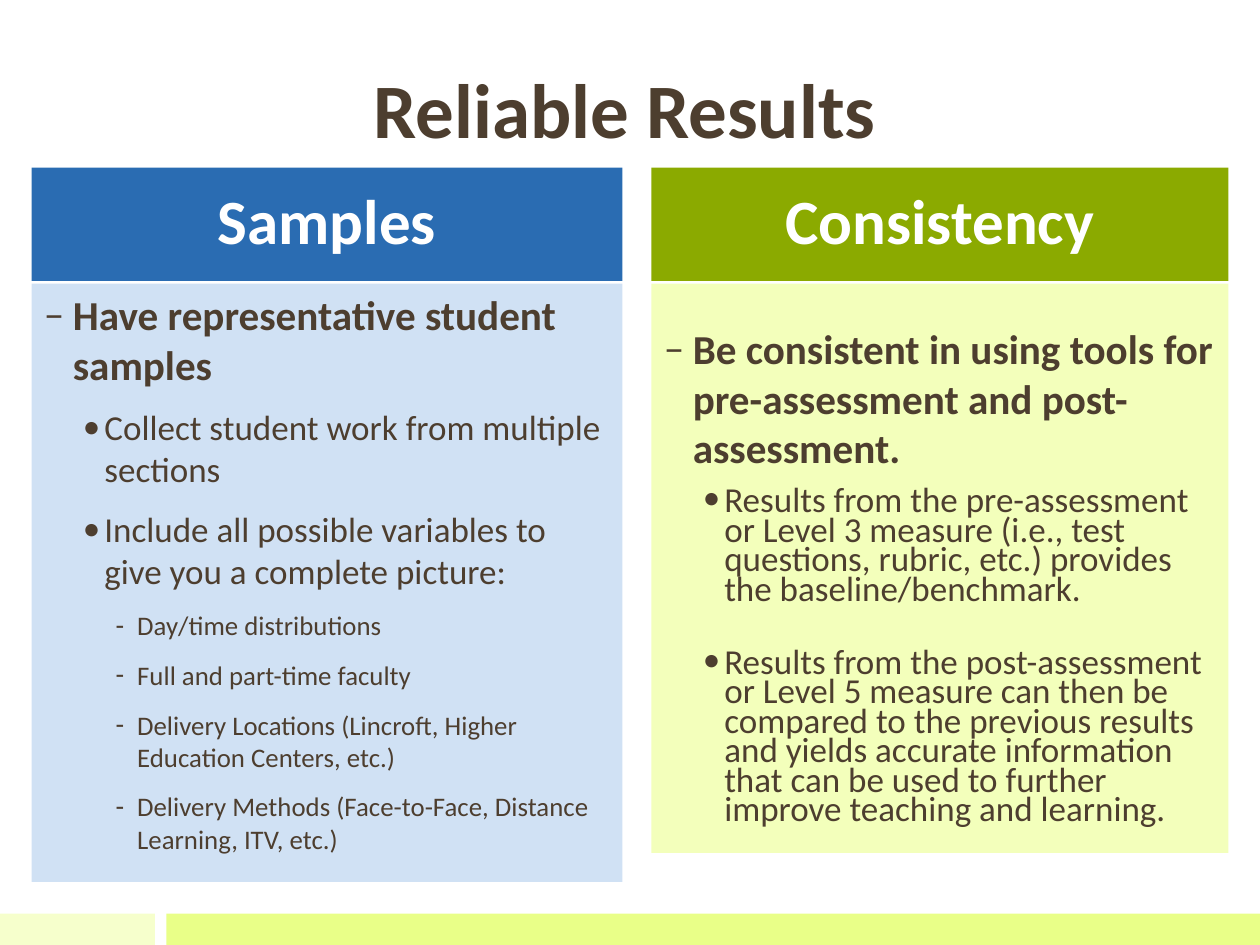
from pptx import Presentation
from pptx.dml.color import RGBColor
from pptx.enum.shapes import MSO_SHAPE
from pptx.enum.text import MSO_ANCHOR, PP_ALIGN
from pptx.util import Inches, Pt
from lxml import etree

COLORS = {
    "text": "4D3E2F", "white": "FFFFFF",
    "blue": "2A6CB2", "pale_blue": "D0E1F4",
    "green": "8BAA00", "pale_green": "F3FFBB",
    "footer_light": "F6FFCC", "footer": "E9FF88",
}
# Outline level: bullet, left margin, hanging indent, size, bold, space before
LEVELS = [
    ("–", 0.23, 0.23, 23.5, True, 11),
    ("•", 0.48, 0.17, 20, False, 4),
    ("‐", 0.74, 0.17, 15.3, False, 4),
]


def add_panel(left, top, width, height, fill=None):
    panel = slide.shapes.add_shape(
        MSO_SHAPE.RECTANGLE, Inches(left), Inches(top), Inches(width), Inches(height))
    panel.shadow.inherit = False
    panel.line.fill.background()
    if fill:
        panel.fill.solid()
        panel.fill.fore_color.rgb = RGBColor.from_string(COLORS[fill])
    else:
        panel.fill.background()
    panel.text_frame.word_wrap = True
    return panel.text_frame


def write(paragraph, text, size, bold=True, color="text", align=PP_ALIGN.CENTER,
          line=1.0, before=0, after=0, level=0, bullet=None, margin=0, hang=0):
    paragraph.alignment = align
    paragraph.level = level
    paragraph.line_spacing = line
    paragraph.space_before = Pt(before)
    paragraph.space_after = Pt(after)
    run = paragraph.add_run()
    run.text = text
    run.font.name = "Calibri"
    run.font.size = Pt(size)
    run.font.bold = bold
    run.font.color.rgb = RGBColor.from_string(COLORS[color])
    if bullet:
        properties = paragraph._p.get_or_add_pPr()
        properties.set("marL", str(Inches(margin)))
        properties.set("indent", str(-Inches(hang)))
        namespace = properties.nsmap["a"]
        etree.SubElement(properties, f"{{{namespace}}}buFont", typeface="Calibri")
        etree.SubElement(properties, f"{{{namespace}}}buChar", char=bullet)


prs = Presentation()
prs.slide_width, prs.slide_height = Inches(10), Inches(7.5)
slide = prs.slides.add_slide(prs.slide_layouts[6])

add_panel(0, 7.25, 1.23, 0.25, "footer_light")
add_panel(1.32, 7.25, 8.68, 0.25, "footer")

title = add_panel(0.17, 0.3, 9.58, 1.11)
write(title.paragraphs[0], "Reliable Results", 44)

# Each point: level, text, and any spacing that differs from its level
tight = {"line": 0.7, "after": 0}
samples = [
    (0, "Have representative student samples", {}),
    (1, "Collect student work from multiple sections", {}),
    (1, "Include all possible variables to give you a complete picture:", {}),
    (2, "Day/time distributions", {}),
    (2, "Full and part-time faculty", {}),
    (2, "Delivery Locations (Lincroft, Higher Education Centers, etc.)", {}),
    (2, "Delivery Methods (Face-to-Face, Distance Learning, ITV, etc.)", {}),
]
consistency = [
    (0, "Be consistent in using tools for pre-assessment and post-assessment.", {}),
    (1, "Results from the pre-assessment or Level 3 measure (i.e., test questions, "
        "rubric, etc.) provides the baseline/benchmark.", tight),
    (1, "Results from the post-assessment or Level 5 measure can then be compared to "
        "the previous results and yields accurate information that can be used to "
        "further improve teaching and learning.", {**tight, "before": 25}),
]
columns = [
    ("Samples", 0.25, 4.69, 4.75, "blue", "pale_blue", 0.05, samples),
    ("Consistency", 5.17, 4.58, 4.52, "green", "pale_green", 0.32, consistency),
]

for heading, left, width, height, dark, pale, inset, points in columns:
    header = add_panel(left, 1.33, width, 0.9, dark)
    write(header.paragraphs[0], heading, 36, color="white", line=0.9)

    body = add_panel(left, 2.25, width, height, pale)
    body.vertical_anchor = MSO_ANCHOR.TOP
    body.margin_top = Inches(inset)
    for index, (level, text, spacing) in enumerate(points):
        paragraph = body.add_paragraph() if index else body.paragraphs[0]
        bullet, margin, hang, size, bold, before = LEVELS[level]
        style = {"before": before, "after": 6, **spacing}
        write(paragraph, text, size, bold=bold, align=PP_ALIGN.LEFT, level=level,
              bullet=bullet, margin=margin, hang=hang, **style)

prs.save("out.pptx")
